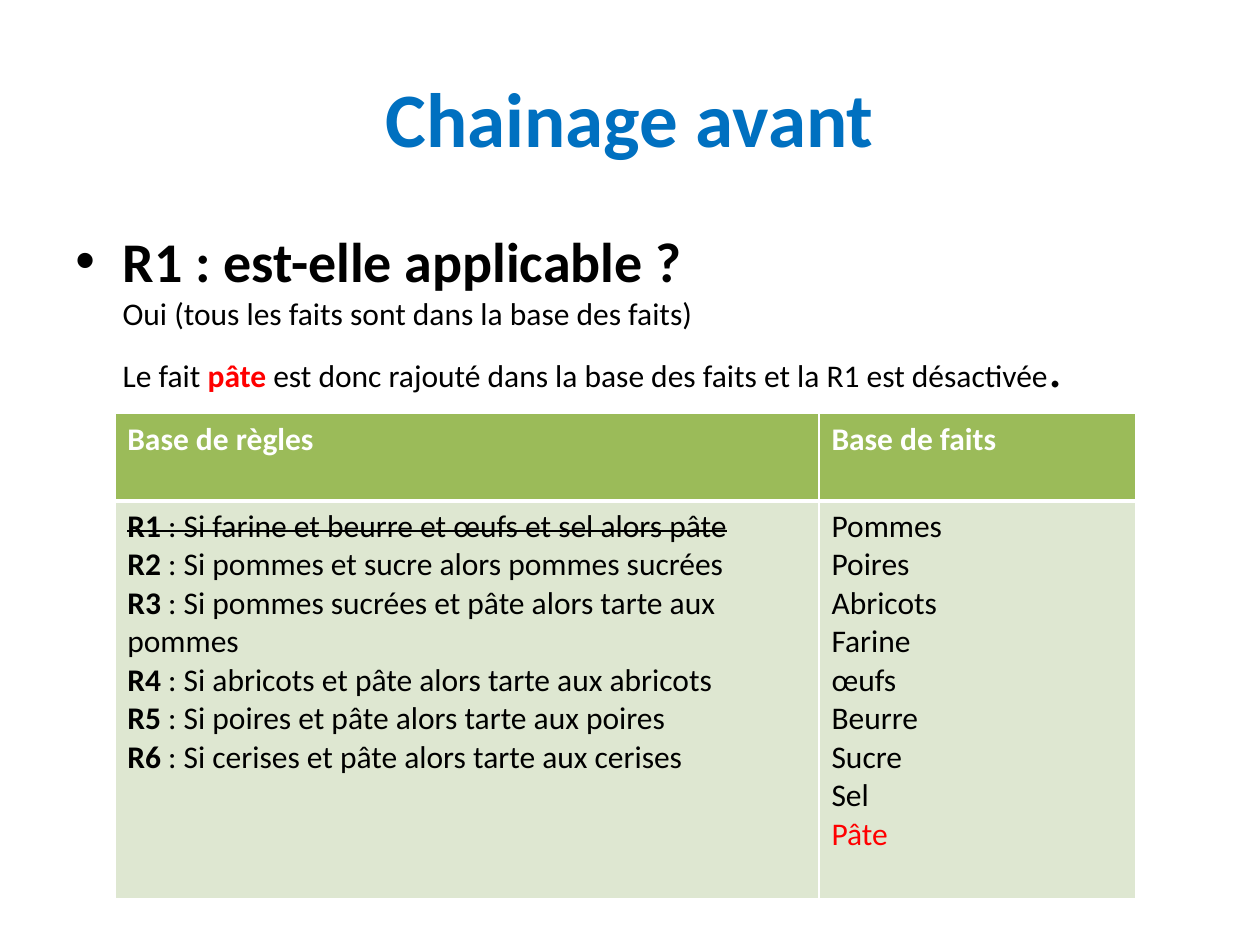
"""Build a slide on forward chaining with a rule base and a fact base."""
from lxml.etree import SubElement
from pptx import Presentation
from pptx.dml.color import RGBColor
from pptx.enum.text import MSO_ANCHOR, PP_ALIGN
from pptx.oxml.ns import qn
from pptx.util import Pt

BLACK = RGBColor(0x00, 0x00, 0x00)
WHITE = RGBColor(0xFF, 0xFF, 0xFF)
BLUE = RGBColor(0x00, 0x70, 0xC0)
RED = RGBColor(0xFF, 0x00, 0x00)
GREEN = RGBColor(0x9B, 0xBB, 0x59)
PALE_GREEN = RGBColor(0xDE, 0xE7, 0xD1)


def add_text(paragraph, text, size=18, color=BLACK, bold=False, strike=False):
    run = paragraph.add_run()
    run.text = text
    run.font.name = "Calibri"
    run.font.size = Pt(size)
    run.font.color.rgb = color
    run.font.bold = bold
    if strike:
        run._r.get_or_add_rPr().set("strike", "sngStrike")


def style_cell(cell, color, top, bottom):
    properties = cell._tc.get_or_add_tcPr()
    for side, width in (("L", 1), ("R", 1), ("T", top), ("B", bottom)):
        border = SubElement(properties, qn(f"a:ln{side}"), w=str(Pt(width)))
        fill = SubElement(border, qn("a:solidFill"))
        SubElement(fill, qn("a:srgbClr"), val=str(WHITE))
    cell.fill.solid()
    cell.fill.fore_color.rgb = color


prs = Presentation()
prs.slide_width, prs.slide_height = Pt(720), Pt(540)
slide = prs.slides.add_slide(prs.slide_layouts[6])

title = slide.shapes.add_textbox(Pt(36), Pt(21.6), Pt(648), Pt(90)).text_frame
title.word_wrap = True
title.vertical_anchor = MSO_ANCHOR.MIDDLE
heading = title.paragraphs[0]
heading.alignment = PP_ALIGN.CENTER
add_text(heading, "Chainage avant", size=44, color=BLUE, bold=True)

body = slide.shapes.add_textbox(Pt(36), Pt(126), Pt(648), Pt(356.4)).text_frame
body.word_wrap = True
question = body.paragraphs[0]
question.space_before = Pt(6.4)
bullet_format = question._p.get_or_add_pPr()
bullet_format.set("marL", str(Pt(27)))
bullet_format.set("indent", str(Pt(-27)))
SubElement(bullet_format, qn("a:buFont"), typeface="Arial")
SubElement(bullet_format, qn("a:buChar"), char="•")
add_text(question, "R1 : est-elle applicable ?", size=32, bold=True)
question.add_line_break()
add_text(question, "Oui (tous les faits sont dans la base des faits)")
question.add_line_break()
add_text(question, "Le fait ")
add_text(question, "pâte", color=RED, bold=True)
add_text(question, " est donc rajouté dans la base des faits et la R1 est désactivée")
add_text(question, ".", size=32)

rules = [
    "Si farine et beurre et œufs et sel alors pâte",
    "Si pommes et sucre alors pommes sucrées",
    "Si pommes sucrées et pâte alors tarte aux pommes",
    "Si abricots et pâte alors tarte aux abricots",
    "Si poires et pâte alors tarte aux poires",
    "Si cerises et pâte alors tarte aux cerises",
]
facts = ["Pommes", "Poires", "Abricots", "Farine", "œufs", "Beurre", "Sucre", "Sel", "Pâte"]

bases = slide.shapes.add_table(2, 2, Pt(65.6), Pt(236.4), Pt(583.6), Pt(277)).table
for column, width in zip(bases.columns, (402.4, 181.2)):
    column.width = Pt(width)
for row, height in zip(bases.rows, (50, 227)):
    row.height = Pt(height)

for index, label in enumerate(("Base de règles", "Base de faits")):
    header = bases.cell(0, index)
    style_cell(header, GREEN, top=1, bottom=3)
    add_text(header.text_frame.paragraphs[0], label, color=WHITE, bold=True)
    style_cell(bases.cell(1, index), PALE_GREEN, top=3, bottom=1)

rule_frame = bases.cell(1, 0).text_frame
for number, rule in enumerate(rules, start=1):
    line = rule_frame.paragraphs[0] if number == 1 else rule_frame.add_paragraph()
    disabled = number == 1
    add_text(line, f"R{number}", bold=True, strike=disabled)
    add_text(line, f" : {rule}", strike=disabled)

fact_frame = bases.cell(1, 1).text_frame
for index, fact in enumerate(facts):
    line = fact_frame.paragraphs[0] if index == 0 else fact_frame.add_paragraph()
    add_text(line, fact, color=RED if fact == "Pâte" else BLACK)

prs.save("out.pptx")
